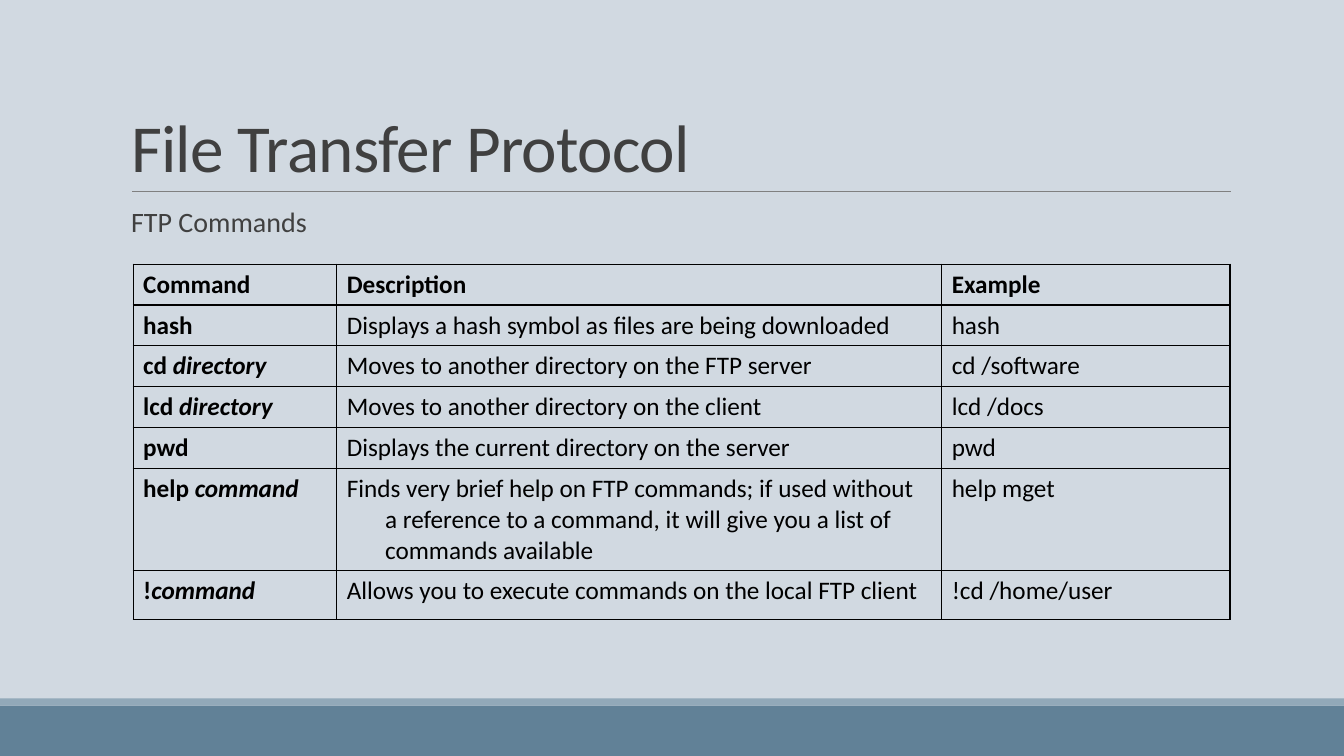
from dataclasses import dataclass

from lxml.etree import SubElement
from pptx import Presentation
from pptx.dml.color import RGBColor as RGB
from pptx.enum.shapes import MSO_CONNECTOR as CONN, MSO_SHAPE as SHAPE
from pptx.enum.text import MSO_ANCHOR as ANCHOR, MSO_AUTO_SIZE as AUTO, PP_ALIGN as ALIGN
from pptx.oxml.ns import qn
from pptx.util import Inches, Pt


@dataclass(frozen=True)
class Theme:
    """Colours, font and type sizes of the slide."""
    back: str = "D1D9E1"
    band: str = "618197"
    stripe: str = "92A9B9"
    rule: str = "808080"
    text: str = "404040"
    bullet: str = "6F6F74"
    table: str = "000000"
    font: str = "Calibri"
    title_size: int = 48
    body_size: int = 20
    table_size: int = 18


THEME = Theme()
COLUMNS = (2.02, 6, 2.86)
ROWS = (0.39, 0.39, 0.39, 0.39, 0.39, 0.97, 0.48)
HEADERS = ("Command", "Description", "Example")
COMMANDS = (
    ("hash", "", "Displays a hash symbol as files are being downloaded", "hash"),
    ("cd ", "directory", "Moves to another directory on the FTP server", "cd /software"),
    ("lcd ", "directory", "Moves to another directory on the client", "lcd /docs"),
    ("pwd", "", "Displays the current directory on the server", "pwd"),
    ("help ", "command", "Finds very brief help on FTP commands; if used without a reference "
     "to a command, it will give you a list of commands available", "help mget"),
    ("!", "command", "Allows you to execute commands on the local FTP client",
     "!cd /home/user"),
)


def set_attrs(obj, **values):
    """Set each named value on an object."""
    for name, value in values.items():
        setattr(obj, name, value)


def add_run(p, text, size, color, bold=False, italic=False):
    """Add a formatted run to a paragraph."""
    r = p.add_run()
    r.text = text
    set_attrs(r.font, name=THEME.font, size=Pt(size), bold=bold, italic=italic)
    r.font.color.rgb = RGB.from_string(color)
    return r


def hang(p, indent):
    """Give a paragraph a hanging indent and return its properties."""
    ppr = p._p.get_or_add_pPr()
    ppr.set("marL", str(Inches(indent)))
    ppr.set("indent", str(-Inches(indent)))
    return ppr


def add_band(s, top, height, color):
    """Draw a full-width band."""
    sp = s.shapes.add_shape(SHAPE.RECTANGLE, 0, Inches(top), Inches(13.33), Inches(height))
    sp.shadow.inherit = False
    sp.fill.solid()
    sp.fill.fore_color.rgb = RGB.from_string(color)
    sp.line.fill.background()


def add_rule(s, left, right, y):
    """Draw the thin line below the title."""
    line = s.shapes.add_connector(CONN.STRAIGHT, Inches(left), Inches(y), Inches(right), Inches(y))
    line.line.color.rgb = RGB.from_string(THEME.rule)
    line.line.width = Pt(0.5)
    SubElement(line._element.spPr, qn("a:effectLst"))


def fill_placeholder(sp, top, height, text, size, frame, para):
    """Place a placeholder and write its single paragraph."""
    set_attrs(sp, left=Inches(1.2), top=Inches(top), width=Inches(11), height=Inches(height))
    tf = sp.text_frame
    set_attrs(tf, word_wrap=True, auto_size=AUTO.NONE, **frame)
    p = tf.paragraphs[0]
    set_attrs(p, alignment=ALIGN.LEFT, **para)
    return p, add_run(p, text, size, THEME.text)


def add_title(s, text):
    """Write the slide title."""
    _, r = fill_placeholder(s.shapes.title, 0.31, 1.59, text, THEME.title_size,
                            {"vertical_anchor": ANCHOR.BOTTOM}, {"line_spacing": 0.85})
    r._r.get_or_add_rPr().set("spc", "-50")


def add_subtitle(s, text):
    """Write the list line below the title."""
    p, _ = fill_placeholder(
        s.placeholders[1], 2.02, 0.48, text, THEME.body_size,
        {"margin_left": 0, "margin_right": 0, "vertical_anchor": ANCHOR.TOP},
        {"line_spacing": 0.9, "space_before": Pt(12), "space_after": Pt(2)})
    ppr = hang(p, 0.1)
    SubElement(SubElement(ppr, qn("a:buClr")), qn("a:srgbClr"), val=THEME.bullet)
    SubElement(ppr, qn("a:buChar"), char=" ")


def format_cell(cell, runs):
    """Write (text, bold, italic) runs in a bordered, unfilled cell."""
    p = cell.text_frame.paragraphs[0]
    hang(p, 0.38)
    for text, bold, italic in runs:
        add_run(p, text, THEME.table_size, THEME.table, bold, italic)
    tcpr = cell._tc.get_or_add_tcPr()
    for side in ("lnL", "lnR", "lnT", "lnB"):
        ln = SubElement(tcpr, qn(f"a:{side}"), w=str(Pt(1)))
        SubElement(SubElement(ln, qn("a:solidFill")), qn("a:srgbClr"), val=THEME.table)
    cell.fill.background()


def add_commands(s):
    """Build the table of commands."""
    table = s.shapes.add_table(len(ROWS), len(COLUMNS), Inches(1.32), Inches(2.62),
                               Inches(sum(COLUMNS)), Inches(sum(ROWS))).table
    set_attrs(table, first_row=False, horz_banding=False)
    for col, width in zip(table.columns, COLUMNS):
        col.width = Inches(width)
    for row, height in zip(table.rows, ROWS):
        row.height = Inches(height)
    content = [[[(text, True, False)] for text in HEADERS]]
    for name, argument, description, example in COMMANDS:
        command = [(name, True, False)] + ([(argument, True, True)] if argument else [])
        content.append([command, [(description, False, False)], [(example, False, False)]])
    for row, cells in zip(table.rows, content):
        for cell, runs in zip(row.cells, cells):
            format_cell(cell, runs)


def main():
    """Build and save the slide."""
    prs = Presentation()
    set_attrs(prs, slide_width=Inches(13.33), slide_height=Inches(7.5))
    s = prs.slides.add_slide(prs.slide_layouts[1])
    s.background.fill.solid()
    s.background.fill.fore_color.rgb = RGB.from_string(THEME.back)
    add_band(s, 7, 0.5, THEME.band)
    add_band(s, 6.93, 0.07, THEME.stripe)
    add_rule(s, 1.31, 12.21, 1.9)
    add_title(s, "File Transfer Protocol")
    add_subtitle(s, "FTP Commands")
    add_commands(s)
    prs.save("out.pptx")


if __name__ == "__main__":
    main()
